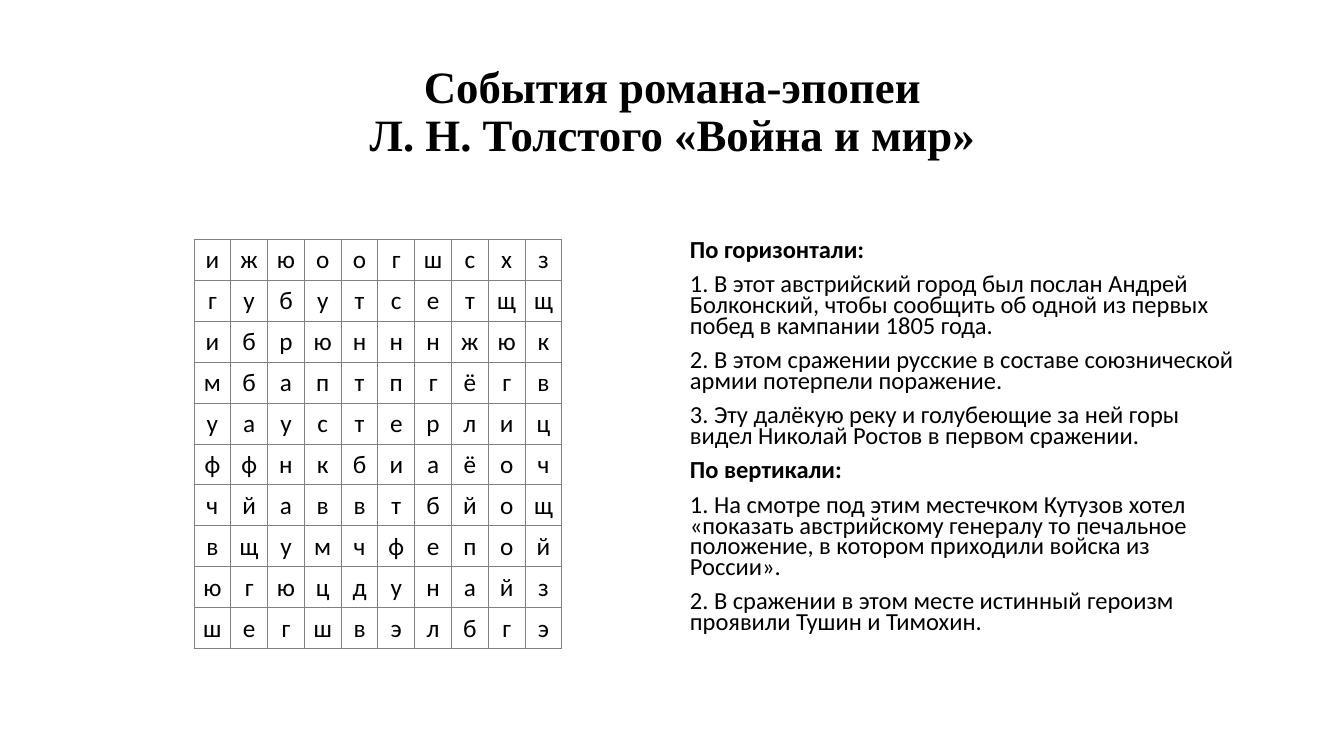
import lxml.etree
import pptx
import pptx.dml.color
import pptx.enum.text
import pptx.oxml.ns
import pptx.util

BLACK = pptx.dml.color.RGBColor(0x00, 0x00, 0x00)
WHITE = pptx.dml.color.RGBColor(0xFF, 0xFF, 0xFF)
GRAY = pptx.dml.color.RGBColor(0x81, 0x81, 0x81)
CENTER = pptx.enum.text.PP_ALIGN.CENTER
LEFT = pptx.enum.text.PP_ALIGN.LEFT
MIDDLE = pptx.enum.text.MSO_ANCHOR.MIDDLE

TITLE = "События романа-эпопеи\vЛ. Н. Толстого «Война и мир»"
LETTERS = [
    "ижюоогшcхз",
    "губутcетщщ",
    "ибрюнннжюк",
    "мбаптпгёгв",
    "уаустерлиц",
    "ффнкбиаёоч",
    "чйаввтбйощ",
    "вщумчфепой",
    "югюцдунайз",
    "шегшвэлбгэ",
]
CLUES = {
    "По горизонтали:": [
        "1. В этот австрийский город был послан Андрей Болконский, чтобы сообщить "
        "об одной из первых побед в кампании 1805 года.",
        "2. В этом сражении русские в составе союзнической армии потерпели поражение.",
        "3. Эту далёкую реку и голубеющие за ней горы видел Николай Ростов "
        "в первом сражении.",
    ],
    "По вертикали:": [
        "1. На смотре под этим местечком Кутузов хотел «показать австрийскому генералу "
        "то печальное положение, в котором приходили войска из России».",
        "2. В сражении в этом месте истинный героизм проявили Тушин и Тимохин.",
    ],
}


def px(count):
    """Turn pixels, 100.8 to the inch, into EMU."""
    return pptx.util.Emu(round(count * 914400 / 100.8))


def write(para, text, size, font="Calibri", bold=False, align=LEFT, spacing=1.0, before=0):
    """Put formatted text in a paragraph; a vertical tab breaks the line."""
    para.text = text
    para.alignment = align
    para.line_spacing = spacing
    para.space_before = pptx.util.Pt(before)
    for span in para.runs:
        span.font.name = font
        span.font.size = pptx.util.Pt(size)
        span.font.bold = bold
        span.font.color.rgb = BLACK


deck = pptx.Presentation()
deck.slide_width, deck.slide_height = px(1344), px(756)
page = deck.slides.add_slide(deck.slide_layouts[5])

title = page.shapes.title
title.left, title.top, title.width, title.height = px(93), px(40), px(1159), px(146)
title.text_frame.vertical_anchor = MIDDLE
write(title.text_frame.paragraphs[0], TITLE, size=32, font="Times New Roman",
      bold=True, align=CENTER, spacing=0.9)

# Letter grid
grid_width, row_height = px(368), px(41)
grid = page.shapes.add_table(len(LETTERS), len(LETTERS[0]), px(194), px(239),
                             grid_width, row_height * len(LETTERS)).table
grid.first_row = False
grid.horz_banding = False
for column in grid.columns:
    column.width = grid_width // len(LETTERS[0])
for row, letters in zip(grid.rows, LETTERS):
    row.height = row_height
    for cell, letter in zip(row.cells, letters):
        cell.margin_left = cell.margin_right = cell.margin_top = cell.margin_bottom = 0
        cell.vertical_anchor = MIDDLE
        write(cell.text_frame.paragraphs[0], letter, size=18, align=CENTER)
        properties = cell._tc.get_or_add_tcPr()
        for side in ("a:lnL", "a:lnR", "a:lnT", "a:lnB"):
            border = lxml.etree.SubElement(properties, pptx.oxml.ns.qn(side),
                                           w=str(pptx.util.Pt(0.75)))
            paint = lxml.etree.SubElement(border, pptx.oxml.ns.qn("a:solidFill"))
            lxml.etree.SubElement(paint, pptx.oxml.ns.qn("a:srgbClr"), val=str(GRAY))
        cell.fill.solid()
        cell.fill.fore_color.rgb = WHITE

# Clues
box = page.shapes.add_textbox(px(680), px(202), px(572), px(480))
frame = box.text_frame
frame.word_wrap = True
frame.margin_top = px(40)
lines = []
for heading, clues in CLUES.items():
    lines.append((heading, True))
    lines.extend((clue, False) for clue in clues)
for index, (text, bold) in enumerate(lines):
    para = frame.add_paragraph() if index else frame.paragraphs[0]
    write(para, text, size=17.5, bold=bold, spacing=0.7, before=10)

deck.save("out.pptx")
